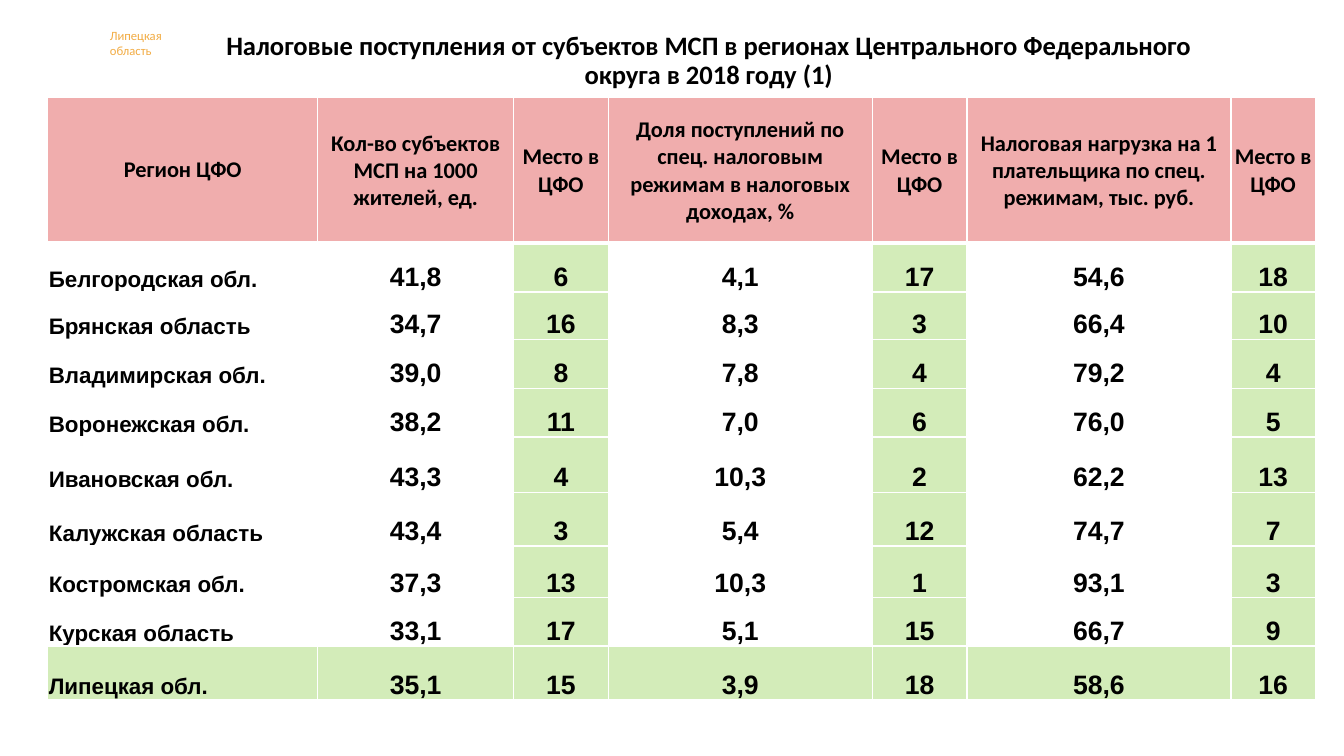
from typing import NamedTuple

from lxml import etree
from pptx import Presentation
from pptx.dml.color import RGBColor
from pptx.enum import text
from pptx.oxml import ns
from pptx.util import Cm, Pt

BLACK, WHITE, ROSE, GREEN, AMBER = "000000", "FFFFFF", "F0ADAD", "D3ECB9", "F2AC44"
CENTER, LEFT = text.PP_ALIGN.CENTER, text.PP_ALIGN.LEFT
MIDDLE, BOTTOM = text.MSO_ANCHOR.MIDDLE, text.MSO_ANCHOR.BOTTOM
TIGHT = (0.03, 0.03, 0.03, 0)


class Region(NamedTuple):
    name: str
    height: float
    figures: tuple[str, ...]


class CellLook(NamedTuple):
    font: str
    size: float
    align: text.PP_ALIGN
    anchor: text.MSO_ANCHOR
    fill: str | None
    margins: tuple[float, ...] = TIGHT
    top_line: float = 1
    bottom_line: float = 1


HEADER_HEIGHT = 3.66
HEADINGS = (
    "Регион ЦФО",
    "Кол-во субъектов МСП на 1000 жителей, ед.",
    "Место в ЦФО",
    "Доля поступлений по спец. налоговым режимам в налоговых доходах, %",
    "Место в ЦФО",
    "Налоговая нагрузка на 1 плательщика по спец. режимам, тыс. руб.",
    "Место в ЦФО",
)
COLUMN_WIDTHS = (6.81, 4.93, 2.39, 6.65, 2.39, 6.65, 2.13)
REGIONS = (
    Region("Белгородская обл.", 1.24, ("41,8", "6", "4,1", "17", "54,6", "18")),
    Region("Брянская область", 1.19, ("34,7", "16", "8,3", "3", "66,4", "10")),
    Region("Владимирская обл.", 1.24, ("39,0", "8", "7,8", "4", "79,2", "4")),
    Region("Воронежская обл.", 1.22, ("38,2", "11", "7,0", "6", "76,0", "5")),
    Region("Ивановская обл.", 1.4, ("43,3", "4", "10,3", "2", "62,2", "13")),
    Region("Калужская область", 1.35, ("43,4", "3", "5,4", "12", "74,7", "7")),
    Region("Костромская обл.", 1.3, ("37,3", "13", "10,3", "1", "93,1", "3")),
    Region("Курская область", 1.22, ("33,1", "17", "5,1", "15", "66,7", "9")),
    Region("Липецкая обл.", 1.35, ("35,1", "15", "3,9", "18", "58,6", "16")),
)


def color(value: str) -> RGBColor:
    return RGBColor.from_string(value)


def place(shape, left: float, top: float, width: float, height: float) -> None:
    shape.left, shape.top = Cm(left), Cm(top)
    shape.width, shape.height = Cm(width), Cm(height)


def set_margins(target, margins: tuple[float, ...]) -> None:
    (target.margin_left, target.margin_top,
     target.margin_right, target.margin_bottom) = map(Cm, margins)


def style_runs(paragraph, font: str, size: float, ink: str, bold: bool) -> None:
    for run in paragraph.runs:
        run.font.name, run.font.size, run.font.bold = font, Pt(size), bold
        run.font.color.rgb = color(ink)


def set_borders(cell, top: float, bottom: float) -> None:
    properties = cell._tc.get_or_add_tcPr()
    sides = (("lnL", 1), ("lnR", 1), ("lnT", top), ("lnB", bottom))
    for index, (side, points) in enumerate(sides):
        line = etree.Element(ns.qn(f"a:{side}"), w=str(Pt(points)))
        fill = etree.SubElement(line, ns.qn("a:solidFill"))
        etree.SubElement(fill, ns.qn("a:srgbClr"), val=WHITE)
        properties.insert(index, line)


def fill_cell(cell, wording: str, look: CellLook) -> None:
    cell.text_frame.text = wording
    paragraph = cell.text_frame.paragraphs[0]
    paragraph.alignment = look.align
    style_runs(paragraph, look.font, look.size, BLACK, True)
    cell.vertical_anchor = look.anchor
    set_margins(cell, look.margins)
    if look.fill:
        cell.fill.solid()
        cell.fill.fore_color.rgb = color(look.fill)
    else:
        cell.fill.background()
    set_borders(cell, look.top_line, look.bottom_line)


def region_look(row: int, column: int) -> CellLook:
    is_rank = column > 0 and column % 2 == 0
    is_highlighted = row == len(REGIONS)
    return CellLook(
        font="Arial",
        size=19 if column else 16,
        align=CENTER if column else LEFT,
        anchor=BOTTOM,
        fill=GREEN if is_rank or is_highlighted else None,
        top_line=3 if row == 1 else 1,
    )


def add_title(slide) -> None:
    title = slide.shapes.title
    place(title, 4.78, 0.36, 26.16, 2.39)
    frame = title.text_frame
    frame.text = ("Налоговые поступления от субъектов МСП в регионах "
                  "Центрального Федерального округа в 2018 году (1)")
    frame.word_wrap, frame.auto_size = True, text.MSO_AUTO_SIZE.NONE
    frame.vertical_anchor = MIDDLE
    set_margins(frame, (0.18, 0.1, 0.18, 0.1))
    heading = frame.paragraphs[0]
    heading.alignment, heading.line_spacing = CENTER, 0.9
    style_runs(heading, "Calibri", 19, BLACK, True)


def add_region_label(slide) -> None:
    label = slide.shapes.add_textbox(Cm(2.59), Cm(0.61), Cm(2.31), Cm(0.99))
    frame = label.text_frame
    frame.text = "Липецкая\nобласть"
    frame.word_wrap, frame.auto_size = True, text.MSO_AUTO_SIZE.SHAPE_TO_FIT_TEXT
    set_margins(frame, (0.18, 0.1, 0.18, 0.1))
    for paragraph in frame.paragraphs:
        style_runs(paragraph, "Calibri", 9, AMBER, False)


def add_tax_table(slide) -> None:
    heights = (HEADER_HEIGHT, *(region.height for region in REGIONS))
    table = slide.shapes.add_table(
        len(heights), len(HEADINGS), Cm(1.2), Cm(2.46),
        Cm(sum(COLUMN_WIDTHS)), Cm(sum(heights))).table
    table.first_row = table.horz_banding = False
    for column, width in zip(table.columns, COLUMN_WIDTHS):
        column.width = Cm(width)
    for row, height in zip(table.rows, heights):
        row.height = Cm(height)

    # Header row
    for column, heading in enumerate(HEADINGS):
        margins = TIGHT if column else (0.25, 0.13, 0.25, 0.13)
        look = CellLook("Calibri", 16, CENTER, MIDDLE, ROSE, margins, bottom_line=3)
        fill_cell(table.cell(0, column), heading, look)

    # Region rows
    for row, region in enumerate(REGIONS, start=1):
        for column, wording in enumerate((region.name, *region.figures)):
            fill_cell(table.cell(row, column), wording, region_look(row, column))


def main() -> None:
    deck = Presentation()
    deck.slide_width, deck.slide_height = Cm(33.87), Cm(19.05)
    slide = deck.slides.add_slide(deck.slide_layouts.get_by_name("Title Only"))
    add_region_label(slide)
    add_tax_table(slide)
    add_title(slide)
    deck.save("out.pptx")


if __name__ == "__main__":
    main()
